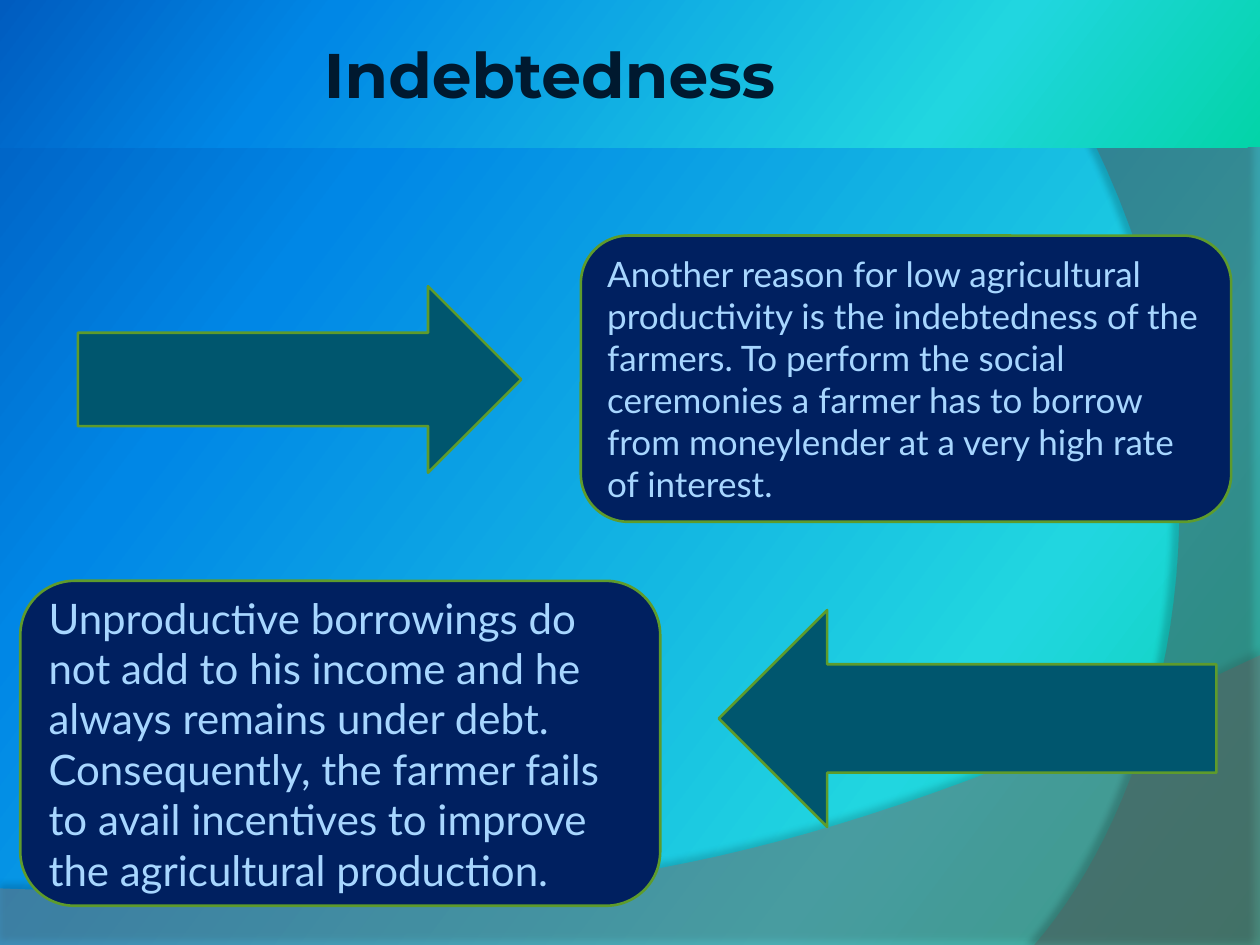
from copy import deepcopy
from dataclasses import dataclass

from lxml import etree
from pptx import Presentation
from pptx import util as u
from pptx.dml.color import RGBColor
from pptx.enum import shapes, text
from pptx.oxml import ns


@dataclass(frozen=True)
class Theme:
    gradient: tuple = ((0, "03D4A8"), (0.25, "21D6E0"), (0.75, "0087E6"), (1, "005CBF"))
    gradient_angle: int = 143
    title: str = "00192F"
    body: str = "A7D6FF"
    box: str = "002060"
    arrow: str = "00566E"
    outline: str = "5E9B2C"
    outline_width: float = 1.5
    title_font: str = "Montserrat"
    body_font: str = "Lato"
    title_size: int = 36
    large_size: int = 24
    body_size: int = 20


THEME = Theme()


def rgb(value):
    return RGBColor.from_string(value)


def fill_gradient(fill, holder):
    """Apply the theme gradient to a fill that lives inside the XML element holder."""
    fill.gradient()
    fill.gradient_angle = THEME.gradient_angle
    stops = next(holder.iter(ns.qn("a:gsLst")))
    while len(stops) < len(THEME.gradient):
        stops.append(deepcopy(stops[0]))
    for stop, (position, color) in zip(fill.gradient_stops, THEME.gradient):
        stop.position = position
        stop.color.rgb = rgb(color)


def curve_points(start, c1, c2, end, steps=40):
    """Points along a cubic curve, without its start."""
    for i in range(1, steps + 1):
        t = i / steps
        weights = ((1 - t) ** 3, 3 * t * (1 - t) ** 2, 3 * t * t * (1 - t), t ** 3)
        yield tuple(sum(w * p[axis] for w, p in zip(weights, (start, c1, c2, end)))
                    for axis in (0, 1))


def add_alpha(color, percent):
    etree.SubElement(color, ns.qn("a:alpha"), val=str(percent * 1000))


def add_shadow(sp, percent, distance, direction):
    effects = etree.SubElement(sp.element.spPr, ns.qn("a:effectLst"))
    shadow = etree.SubElement(effects, ns.qn("a:outerShdw"), blurRad=str(u.Pt(4)),
                              dist=str(u.Pt(distance)), dir=str(direction * 60000))
    add_alpha(etree.SubElement(shadow, ns.qn("a:srgbClr"), val="000000"), percent)


def add_wave(s, corners, curve, color, opacity, shadow):
    """Draw a translucent area with straight corners and one curved edge."""
    outline = [*corners, *curve_points(corners[-1], *curve)]
    points = [(u.Cm(x), u.Cm(y)) for x, y in outline]
    builder = s.shapes.build_freeform(*points[0])
    builder.add_line_segments(points[1:], close=True)
    sp = builder.convert_to_shape()
    sp.fill.solid()
    sp.fill.fore_color.rgb = rgb(color)
    add_alpha(next(sp.element.spPr.iter(ns.qn("a:srgbClr"))), opacity)
    sp.line.fill.background()
    add_shadow(sp, *shadow)


def add_text(sp, content, font, size, color, bold=False):
    tf = sp.text_frame
    tf.word_wrap = True
    tf.auto_size = text.MSO_AUTO_SIZE.NONE
    tf.vertical_anchor = text.MSO_ANCHOR.MIDDLE
    p = tf.paragraphs[0]
    p.alignment = text.PP_ALIGN.LEFT
    r = p.add_run()
    r.text = content
    r.font.name, r.font.size, r.font.bold = font, u.Pt(size), bold
    r.font.color.rgb = rgb(color)


def place_title(s, content):
    sp = s.shapes.title
    sp.left, sp.top, sp.width, sp.height = u.Cm(0), u.Cm(0), u.Cm(25.4), u.Cm(2.97)
    fill_gradient(sp.fill, sp.element)
    add_text(sp, content, THEME.title_font, THEME.title_size, THEME.title, bold=True)
    tf = sp.text_frame
    tf.margin_left = u.Cm(6.53)
    tf.margin_right = tf.margin_top = tf.margin_bottom = u.Cm(0.13)
    sp.element.getparent().append(sp.element)  # in front of the waves


def add_panel(s, kind, box, color):
    sp = s.shapes.add_shape(kind, *map(u.Cm, box))
    sp.shadow.inherit = False
    sp.fill.solid()
    sp.fill.fore_color.rgb = rgb(color)
    sp.line.color.rgb = rgb(THEME.outline)
    sp.line.width = u.Pt(THEME.outline_width)
    return sp


def add_text_box(s, box, content, size):
    sp = add_panel(s, shapes.MSO_SHAPE.ROUNDED_RECTANGLE, box, THEME.box)
    add_text(sp, content, THEME.body_font, size, THEME.body)


def add_arrow(s, kind, box, rotation=0):
    add_panel(s, kind, box, THEME.arrow).rotation = rotation


def main():
    prs = Presentation()
    prs.slide_width, prs.slide_height = u.Cm(25.4), u.Cm(19.05)
    s = prs.slides.add_slide(prs.slide_layouts[5])
    fill_gradient(s.background.fill, s.element)

    add_wave(s, [(0, 17.91), (0, 19.05), (25.4, 19.05), (25.4, 13.21)],
             [(14.2, 18.52), (9.93, 18.26), (0, 17.91)], "7F7F7F", 45, (35, 3.5, 270))
    add_wave(s, [(25.4, 0.05), (25.4, 19.05), (20.85, 19.05)],
             [(23.75, 15.72), (25.86, 7.62), (20.32, 0)], "5E5E5E", 40, (45, 4, 180))
    place_title(s, "Indebtedness")

    add_arrow(s, shapes.MSO_SHAPE.RIGHT_ARROW, (1.57, 5.77, 8.94, 3.76))
    add_text_box(s, (11.71, 4.75, 13.11, 5.77),
                 "Another reason for low agricultural productivity is the indebtedness of the "
                 "farmers. To perform the social ceremonies a farmer has to borrow from "
                 "moneylender at a very high rate of interest.", THEME.body_size)
    add_text_box(s, (0.41, 11.71, 12.9, 6.55),
                 "Unproductive borrowings do not add to his income and he always remains under "
                 "debt. Consequently, the farmer fails to avail incentives to improve the "
                 "agricultural production.", THEME.large_size)
    add_arrow(s, shapes.MSO_SHAPE.DOWN_ARROW, (17.32, 9.47, 4.37, 10.03), rotation=90)
    prs.save("out.pptx")


if __name__ == "__main__":
    main()
